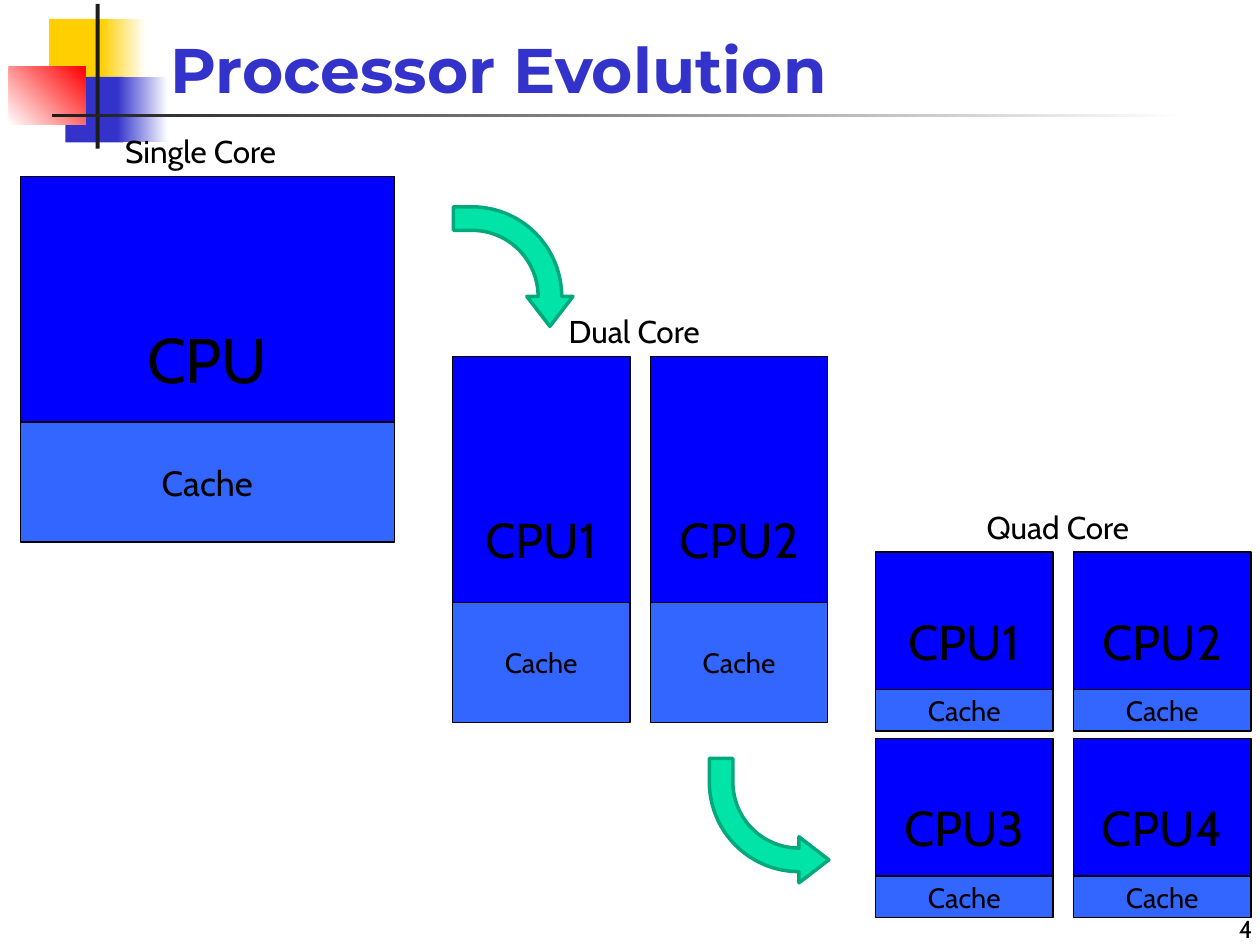
from dataclasses import dataclass

from pptx import Presentation
from pptx.dml.color import RGBColor
from pptx.enum.shapes import MSO_SHAPE
from pptx.enum.text import MSO_ANCHOR, PP_ALIGN
from pptx.oxml.ns import qn
from pptx.util import Cm, Pt


@dataclass(frozen=True)
class Theme:
    title_font: str = "Montserrat"
    body_font: str = "Cabin"
    white: str = "FFFFFF"
    black: str = "000000"
    yellow: str = "FFCF01"
    indigo: str = "3333CC"
    red: str = "FF0000"
    rule: str = "1C1C1C"
    core: str = "0000FF"
    cache: str = "3366FF"
    arrow: str = "00E4A8"
    arrow_edge: str = "00A97C"
    title_size: int = 36
    label_size: int = 18
    number_size: int = 14


THEME = Theme()


@dataclass(frozen=True)
class Processor:
    label: str
    label_left: float
    left: float
    top: float
    width: float
    height: float
    cache_offset: float
    cache_height: float
    core_size: int
    cache_size: int
    rows: tuple


COLUMN_PITCH, ROW_PITCH = 3.99, 3.76
LABEL_WIDTH, LABEL_HEIGHT = 4.95, 1.02

PROCESSORS = [
    Processor("Single Core", 1.57, 0.41, 3.56, 7.54, 7.34, 4.95, 2.42, 36, 20,
              (("CPU",),)),
    Processor("Dual Core", 10.31, 9.12, 7.19, 3.58, 7.34, 4.95, 2.42, 28, 16,
              (("CPU1", "CPU2"),)),
    Processor("Quad Core", 18.85, 17.65, 11.13, 3.58, 3.58, 2.77, 0.84, 28, 16,
              (("CPU1", "CPU2"), ("CPU3", "CPU4"))),
]

# Left, top, width, height, start colour, end colour, gradient angle
DECORATION = [
    (0.99, 0.38, 1.22, 1.32, THEME.yellow, None, 0),
    (2.03, 0.38, 0.91, 1.32, THEME.yellow, THEME.white, 0),
    (1.32, 1.55, 1.17, 1.32, THEME.indigo, None, 0),
    (2.36, 1.55, 1.02, 1.32, THEME.indigo, THEME.white, 0),
    (0.18, 1.35, 1.55, 1.17, THEME.white, THEME.red, 45),
    (1.93, 0.08, 0.08, 2.92, THEME.rule, None, 0),
    (1.04, 2.29, 22.86, 0.08, THEME.rule, THEME.white, 0),
]


def rgb(value):
    return RGBColor.from_string(value)


def write(frame, text, size, align, color=THEME.black, font=THEME.body_font):
    frame.text = text
    para = frame.paragraphs[0]
    para.alignment = align
    para.font.name = font
    para.font.size = Pt(size)
    para.font.color.rgb = rgb(color)
    return para


def add_shape(slide, kind, left, top, width, height, fill, line=None, weight=0.75):
    shape = slide.shapes.add_shape(kind, Cm(left), Cm(top), Cm(width), Cm(height))
    shape.shadow.inherit = False
    shape.fill.solid()
    shape.fill.fore_color.rgb = rgb(fill)
    if line:
        shape.line.color.rgb = rgb(line)
        shape.line.width = Pt(weight)
    else:
        shape.line.fill.background()
    return shape


def add_decoration(slide):
    for left, top, width, height, start, end, angle in DECORATION:
        block = add_shape(slide, MSO_SHAPE.RECTANGLE, left, top, width, height, start)
        if end:
            block.fill.gradient()
            block.fill.gradient_angle = angle
            for stop, color in zip(block.fill.gradient_stops, (start, end)):
                stop.color.rgb = rgb(color)


def add_title(slide, text):
    title = slide.shapes.title
    title.left, title.top = Cm(3.18), Cm(-0.08)
    title.width, title.height = Cm(22.22), Cm(2.34)
    title.text_frame.vertical_anchor = MSO_ANCHOR.BOTTOM
    para = write(title.text_frame, text, THEME.title_size, PP_ALIGN.LEFT,
                 THEME.indigo, THEME.title_font)
    para.font.bold = True


def add_text(slide, text, left, top, width, height, size, align, anchor):
    box = slide.shapes.add_textbox(Cm(left), Cm(top), Cm(width), Cm(height))
    box.text_frame.word_wrap = True
    box.text_frame.vertical_anchor = anchor
    write(box.text_frame, text, size, align)


def add_block(slide, text, left, top, width, height, fill, size):
    block = add_shape(slide, MSO_SHAPE.RECTANGLE, left, top, width, height,
                      fill, THEME.black)
    block.text_frame.word_wrap = False
    block.text_frame.vertical_anchor = MSO_ANCHOR.MIDDLE
    write(block.text_frame, text, size, PP_ALIGN.CENTER)


def add_processor(slide, chip):
    add_text(slide, chip.label, chip.label_left, chip.top - LABEL_HEIGHT,
             LABEL_WIDTH, LABEL_HEIGHT, THEME.label_size, PP_ALIGN.CENTER,
             MSO_ANCHOR.TOP)
    for row, names in enumerate(chip.rows):
        top = chip.top + row * ROW_PITCH
        for column, name in enumerate(names):
            left = chip.left + column * COLUMN_PITCH
            add_block(slide, name, left, top, chip.width, chip.height,
                      THEME.core, chip.core_size)
            add_block(slide, "Cache", left, top + chip.cache_offset, chip.width,
                      chip.cache_height, THEME.cache, chip.cache_size)


def add_bent_arrow(slide, left, top, width, height, rotation=0, flipped=False):
    arrow = add_shape(slide, MSO_SHAPE.BENT_ARROW, left, top, width, height,
                      THEME.arrow, THEME.arrow_edge, 2)
    for index, value in enumerate((0.197, 0.193, 0.25, 0.82)):
        arrow.adjustments[index] = value
    arrow.rotation = rotation
    if flipped:
        arrow.element.spPr.find(qn("a:xfrm")).set("flipV", "1")


def main():
    deck = Presentation()
    deck.slide_width, deck.slide_height = Cm(25.4), Cm(19.05)
    slide = deck.slides.add_slide(deck.slide_layouts[5])

    # Corner ornament and heading
    add_decoration(slide)
    add_title(slide, "Processor Evolution")

    # Processor generations
    for chip in PROCESSORS:
        add_processor(slide, chip)

    # Steps between generations
    add_bent_arrow(slide, 9.14, 4.17, 2.41, 2.41, rotation=90)
    add_bent_arrow(slide, 14.3, 15.29, 2.41, 2.51, flipped=True)

    # Page number
    add_text(slide, "4", 20.22, 17.88, 5.28, 1.27, THEME.number_size,
             PP_ALIGN.RIGHT, MSO_ANCHOR.BOTTOM)

    deck.save("out.pptx")


if __name__ == "__main__":
    main()
